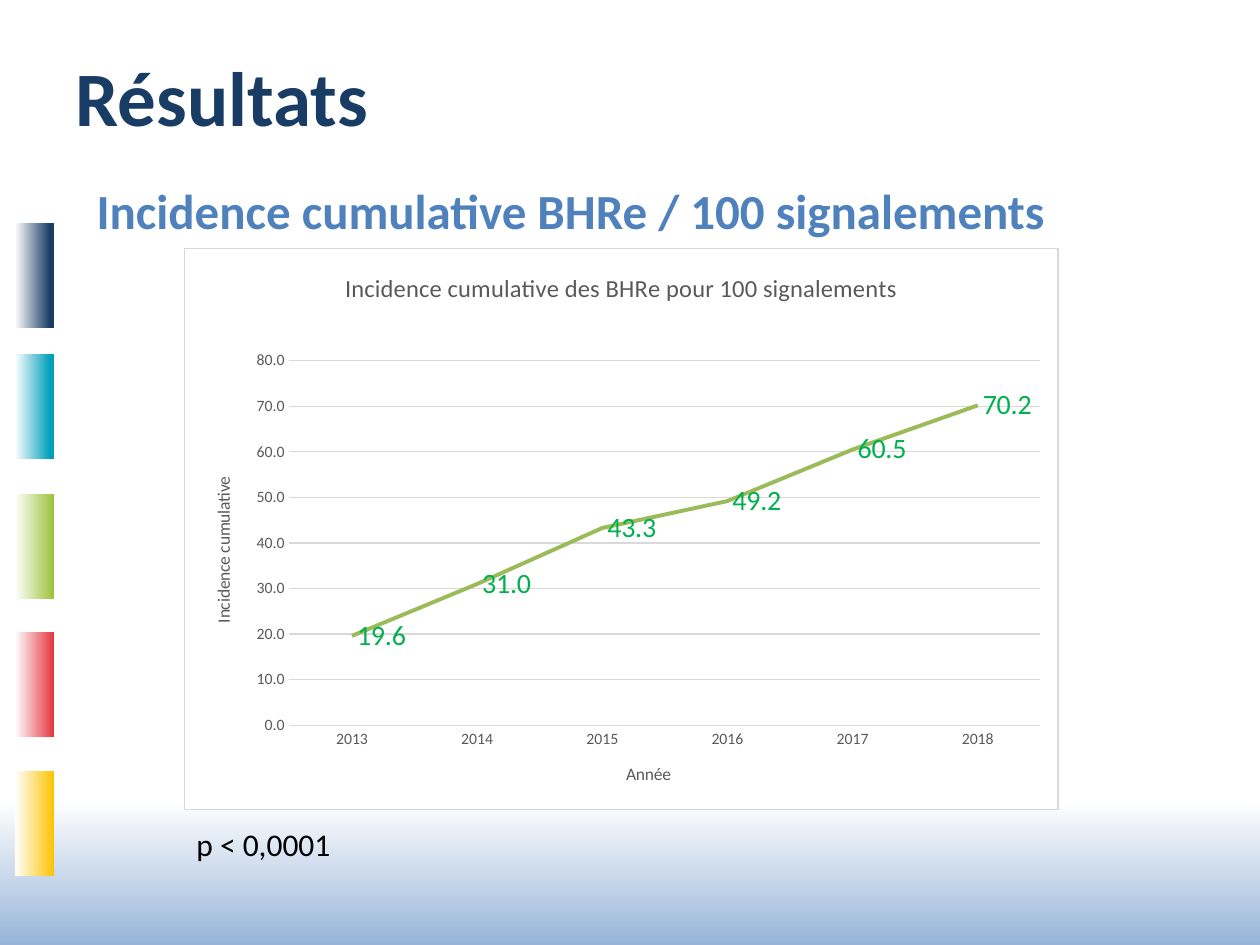
from dataclasses import dataclass
from lxml import etree
from pptx import Presentation
from pptx.chart.data import CategoryChartData
from pptx.dml.color import RGBColor
from pptx.enum.chart import XL_CHART_TYPE as ChartType, XL_LABEL_POSITION as LabelPosition
from pptx.enum.chart import XL_MARKER_STYLE as Marker, XL_TICK_MARK as TickMark
from pptx.enum.shapes import MSO_SHAPE as Shape
from pptx.enum.text import MSO_ANCHOR as Anchor, PP_ALIGN as Align
from pptx.oxml import parse_xml
from pptx.oxml.ns import nsdecls, qn
from pptx.util import Cm, Pt


@dataclass(frozen=True)
class Theme:
    font: str = "Calibri"
    white: str = "FFFFFF"
    black: str = "000000"
    navy: str = "193C64"
    teal: str = "009FBB"
    lime: str = "9CC239"
    red: str = "E53540"
    yellow: str = "FDC300"
    band: str = "95B3D7"
    heading: str = "4F81BD"
    series: str = "9BBB59"
    label: str = "00B050"
    grey: str = "595959"
    grid: str = "D9D9D9"
    title_size: int = 44
    heading_size: int = 28
    note_size: int = 18
    label_size: int = 16
    chart_title_size: int = 14
    axis_title_size: int = 10
    tick_size: int = 9


theme = Theme()


def style(font, size, color, bold=False):
    font.name = theme.font
    font.size = Pt(size)
    font.bold = bold
    font.color.rgb = RGBColor.from_string(color)


def add_gradient(page, left, top, width, height, rotation, color, start=0):
    bar = page.shapes.add_shape(Shape.RECTANGLE, Cm(left), Cm(top), Cm(width), Cm(height))
    bar.rotation = rotation
    bar.shadow.inherit = False
    bar.line.fill.background()
    bar.fill.gradient()
    bar.fill.gradient_angle = 270
    first, last = bar.fill.gradient_stops
    first.position, last.position = start, 1
    first.color.rgb = RGBColor.from_string(color)
    last.color.rgb = RGBColor.from_string(theme.white)


deck = Presentation()
deck.slide_width, deck.slide_height = Cm(25.4), Cm(19.05)
page = deck.slides.add_slide(deck.slide_layouts[5])

add_gradient(page, 0, 16.13, 25.4, 3, 180, theme.band)
for top, color, start in [
    (5.16, theme.navy, 0.1),
    (7.8, theme.teal, 0.1),
    (10.62, theme.lime, 0),
    (13.41, theme.red, 0),
    (16.21, theme.yellow, 0),
]:
    add_gradient(page, -0.36, top, 2.11, 0.79, 90, color, start)

title = page.shapes.title
title.left, title.top, title.width, title.height = Cm(1.27), Cm(0.33), Cm(22.86), Cm(3.18)
title.text_frame.text = "Résultats"
title.text_frame.vertical_anchor = Anchor.MIDDLE
title.text_frame.paragraphs[0].alignment = Align.LEFT
style(title.text_frame.paragraphs[0].runs[0].font, theme.title_size, theme.navy, True)

for text, left, top, width, height, size, color, bold in [
    ("p < 0,0001", 3.71, 16.51, 13.21, 1.8, theme.note_size, theme.black, False),
    ("Incidence cumulative BHRe / 100 signalements", 1.7, 3.51, 23.19, 1.45,
     theme.heading_size, theme.heading, True),
]:
    box = page.shapes.add_textbox(Cm(left), Cm(top), Cm(width), Cm(height))
    box.text_frame.word_wrap = True
    box.text_frame.text = text
    style(box.text_frame.paragraphs[0].runs[0].font, size, color, bold)

data = CategoryChartData(number_format="0.0")
data.categories = ["2013", "2014", "2015", "2016", "2017", "2018"]
data.add_series("Incidence cumulative des BHRe pour 100 signalements",
                [19.6, 31, 43.3, 49.2, 60.5, 70.2])
chart = page.shapes.add_chart(
    ChartType.LINE, Cm(3.71), Cm(5), Cm(17.63), Cm(11.33), data).chart
style(chart.font, theme.axis_title_size, theme.black)
chart.has_legend = False
chart.has_title = True
chart.chart_title.include_in_layout = False

category_axis, value_axis = chart.category_axis, chart.value_axis
for holder, text, size in [
    (chart.chart_title, "Incidence cumulative des BHRe pour 100 signalements", theme.chart_title_size),
    (category_axis.axis_title, "Année", theme.axis_title_size),
    (value_axis.axis_title, "Incidence cumulative", theme.axis_title_size),
]:
    holder.text_frame.text = text
    style(holder.text_frame.paragraphs[0].runs[0].font, size, theme.grey)

for axis in (category_axis, value_axis):
    axis.major_tick_mark = axis.minor_tick_mark = TickMark.NONE
    style(axis.tick_labels.font, theme.tick_size, theme.grey)
category_axis.has_major_gridlines = False
value_axis.has_major_gridlines = True
for line in (category_axis.format.line, value_axis.major_gridlines.format.line):
    line.width = Pt(0.75)
    line.color.rgb = RGBColor.from_string(theme.grid)
value_axis.format.line.fill.background()
value_axis.minimum_scale, value_axis.maximum_scale, value_axis.major_unit = 0, 80, 10
value_axis.tick_labels.number_format = "0.0"
value_axis.tick_labels.number_format_is_linked = False

plot = chart.plots[0]
plot.vary_by_categories = False
series = plot.series[0]
series.smooth = False
series.marker.style = Marker.NONE
series.format.line.width = Pt(2.25)
series.format.line.color.rgb = RGBColor.from_string(theme.series)
labels = series.data_labels
labels.show_value = True
labels.number_format = "0.0"
labels.number_format_is_linked = False
labels.position = LabelPosition.RIGHT
style(labels.font, theme.label_size, theme.label)

chart.element.find(qn("c:chart")).addnext(parse_xml(
    f'<c:spPr {nsdecls("c", "a")}>'
    f'<a:solidFill><a:srgbClr val="{theme.white}"/></a:solidFill>'
    f'<a:ln w="{Pt(0.75)}"><a:solidFill><a:srgbClr val="{theme.grid}"/></a:solidFill></a:ln>'
    '</c:spPr>'))

plot_area = chart.element.find(".//" + qn("c:plotArea"))
for layout in plot_area.findall(qn("c:layout")):
    plot_area.remove(layout)
layout = etree.Element(qn("c:layout"))
manual = etree.SubElement(layout, qn("c:manualLayout"))
for tag, value in [("layoutTarget", "inner"), ("xMode", "edge"), ("yMode", "edge"),
                   ("x", "0.12"), ("y", "0.2"), ("w", "0.86"), ("h", "0.65")]:
    etree.SubElement(manual, qn(f"c:{tag}")).set("val", value)
plot_area.insert(0, layout)

deck.save("out.pptx")
